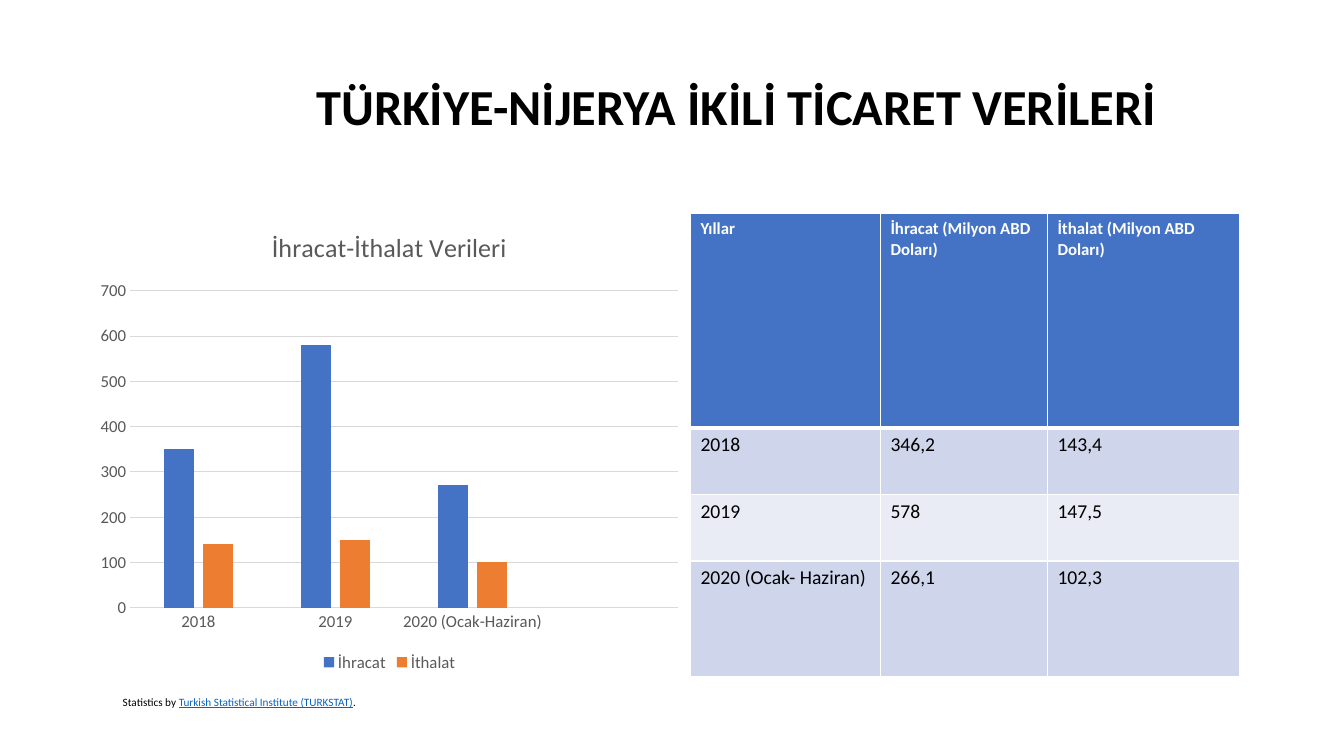
from dataclasses import dataclass

from lxml.etree import SubElement
from pptx import Presentation
from pptx.chart.data import CategoryChartData
from pptx.dml.color import RGBColor
from pptx.enum.chart import XL_CHART_TYPE, XL_LEGEND_POSITION, XL_TICK_MARK
from pptx.enum.text import MSO_ANCHOR, PP_ALIGN
from pptx.oxml import parse_xml
from pptx.oxml.ns import nsdecls, qn
from pptx.util import Pt


@dataclass(frozen=True)
class Theme:
    face: str = "Calibri"
    black: str = "000000"
    white: str = "FFFFFF"
    grey: str = "595959"
    grid: str = "D9D9D9"
    blue: str = "4472C4"
    orange: str = "ED7D31"
    link: str = "0563C1"
    bands: tuple = ("CFD5EA", "E9EBF5")
    head: float = 36
    title: float = 18.6
    body: float = 14
    label: float = 12
    note: float = 8


@dataclass(frozen=True)
class Box:
    left: float
    top: float
    width: float
    height: float

    def place(self) -> tuple:
        return Pt(self.left), Pt(self.top), Pt(self.width), Pt(self.height)


@dataclass(frozen=True)
class Run:
    text: str
    size: float
    color: str
    bold: bool = False
    under: bool = False


@dataclass(frozen=True)
class Year:
    label: str
    name: str
    sold: float
    bought: float
    height: float


THEME = Theme()
YEARS = (
    Year("2018", "2018", 346.2, 143.4, 47.6),
    Year("2019", "2019", 578, 147.5, 47.6),
    Year("2020 (Ocak- Haziran)", "2020 (Ocak-Haziran)", 266.1, 102.3, 82.2),
)
HEADS = ("Yıllar", "İhracat (Milyon ABD Doları)", "İthalat (Milyon ABD Doları)")
WIDTHS = (135.7, 119.3, 137.5)
HEAD_HEIGHT = 153


def style(font, size: float, color: str, bold: bool = False) -> None:
    font.name = THEME.face
    font.size = Pt(size)
    font.bold = bold
    font.color.rgb = RGBColor.from_string(color)


def add_run(para, item: Run) -> None:
    run = para.add_run()
    run.text = item.text
    style(run.font, item.size, item.color, item.bold)
    if item.under:
        run.font.underline = True


def add_text(slide, box: Box, runs: tuple, align=PP_ALIGN.LEFT, space: float = 1) -> None:
    frame = slide.shapes.add_textbox(*box.place()).text_frame
    frame.word_wrap = True
    frame.vertical_anchor = MSO_ANCHOR.TOP
    para = frame.paragraphs[0]
    para.alignment = align
    para.line_spacing = space
    for item in runs:
        add_run(para, item)


def add_edges(cell, top: float, bottom: float) -> None:
    props = cell._tc.get_or_add_tcPr()
    for side, width in (("L", 1), ("R", 1), ("T", top), ("B", bottom)):
        line = SubElement(props, qn(f"a:ln{side}"), w=str(Pt(width)))
        fill = SubElement(line, qn("a:solidFill"))
        SubElement(fill, qn("a:srgbClr"), val=THEME.white)


def comma(value: float) -> str:
    return f"{value:g}".replace(".", ",")


def add_trade_table(slide, box: Box) -> None:
    rows = [HEADS] + [(y.label, comma(y.sold), comma(y.bought)) for y in YEARS]
    table = slide.shapes.add_table(len(rows), len(HEADS), *box.place()).table
    table.horz_banding = False
    for col, width in zip(table.columns, WIDTHS):
        col.width = Pt(width)
    heights = [HEAD_HEIGHT] + [y.height for y in YEARS]
    for r, (texts, height) in enumerate(zip(rows, heights)):
        table.rows[r].height = Pt(height)
        head = r == 0
        fill = THEME.blue if head else THEME.bands[(r - 1) % 2]
        size = THEME.label if head else THEME.body
        color = THEME.white if head else THEME.black
        for c, text in enumerate(texts):
            cell = table.cell(r, c)
            add_edges(cell, 3 if r == 1 else 1, 3 if head else 1)
            cell.fill.solid()
            cell.fill.fore_color.rgb = RGBColor.from_string(fill)
            add_run(cell.text_frame.paragraphs[0], Run(text, size, color, head))


def set_layout(node, index: int, box: Box, **parts: float) -> None:
    """Pin a chart part, given in points from the corner of the chart box."""
    for old in node.findall(qn("c:layout")):
        node.remove(old)
    layout = parse_xml(f"<c:layout {nsdecls('c')}><c:manualLayout/></c:layout>")
    manual = layout[0]
    if "w" in parts:
        SubElement(manual, qn("c:layoutTarget"), val="inner")
    for key in ("x", "y"):
        SubElement(manual, qn(f"c:{key}Mode"), val="edge")
    for key, value in parts.items():
        whole = box.width if key in "xw" else box.height
        SubElement(manual, qn(f"c:{key}"), val=f"{value / whole:.4f}")
    node.insert(index, layout)


def style_line(line) -> None:
    line.color.rgb = RGBColor.from_string(THEME.grid)
    line.width = Pt(0.75)


def tens(values: list) -> list:
    return [round(value, -1) for value in values]


def add_trade_chart(slide, box: Box) -> None:
    data = CategoryChartData()
    data.categories = [y.name for y in YEARS] + [""]
    data.add_series("İhracat", tens([y.sold for y in YEARS]) + [None])
    data.add_series("İthalat", tens([y.bought for y in YEARS]) + [None])
    kind = XL_CHART_TYPE.COLUMN_CLUSTERED
    chart = slide.shapes.add_chart(kind, *box.place(), data).chart
    style(chart.font, THEME.label, THEME.grey)

    chart.has_title = True
    para = chart.chart_title.text_frame.paragraphs[0]
    add_run(para, Run("İhracat-İthalat Verileri", THEME.title, THEME.grey))
    set_layout(chart.chart_title._element, 1, box, x=127.5, y=11.3)
    area = chart._chartSpace.chart.plotArea
    set_layout(area, 0, box, x=29.5, y=58.8, w=391.4, h=226.4)

    chart.has_legend = True
    chart.legend.position = XL_LEGEND_POSITION.BOTTOM
    chart.legend.include_in_layout = False
    style(chart.legend.font, THEME.label, THEME.grey)

    plot = chart.plots[0]
    plot.vary_by_categories = False
    plot.gap_width = 219
    plot.overlap = -27
    for series, color in zip(plot.series, (THEME.blue, THEME.orange)):
        series.format.fill.solid()
        series.format.fill.fore_color.rgb = RGBColor.from_string(color)

    for axis in (chart.category_axis, chart.value_axis):
        axis.major_tick_mark = axis.minor_tick_mark = XL_TICK_MARK.NONE
        style(axis.tick_labels.font, THEME.label, THEME.grey)
    style_line(chart.category_axis.format.line)
    scale = chart.value_axis
    scale.minimum_scale, scale.maximum_scale, scale.major_unit = 0, 700, 100
    scale.format.line.fill.background()
    style_line(scale.major_gridlines.format.line)


def main() -> None:
    deck = Presentation()
    deck.slide_width, deck.slide_height = Pt(960), Pt(540)
    slide = deck.slides.add_slide(deck.slide_layouts[6])
    title = Run("TÜRKİYE-NİJERYA İKİLİ TİCARET VERİLERİ", THEME.head, THEME.black, True)
    add_text(slide, Box(130.3, 54.7, 792, 64.8), (title,), PP_ALIGN.CENTER, 0.9)
    add_trade_table(slide, Box(493.2, 152.6, sum(WIDTHS), 330.4))
    add_text(slide, Box(80.6, 493, 633.6, 26), (
        Run("Statistics by ", THEME.note, THEME.black),
        Run("Turkish Statistical Institute (TURKSTAT)", THEME.note, THEME.link, under=True),
        Run(".", THEME.note, THEME.black),
    ))
    add_trade_chart(slide, Box(63.4, 149, 429.8, 334.1))
    deck.save("out.pptx")


if __name__ == "__main__":
    main()
